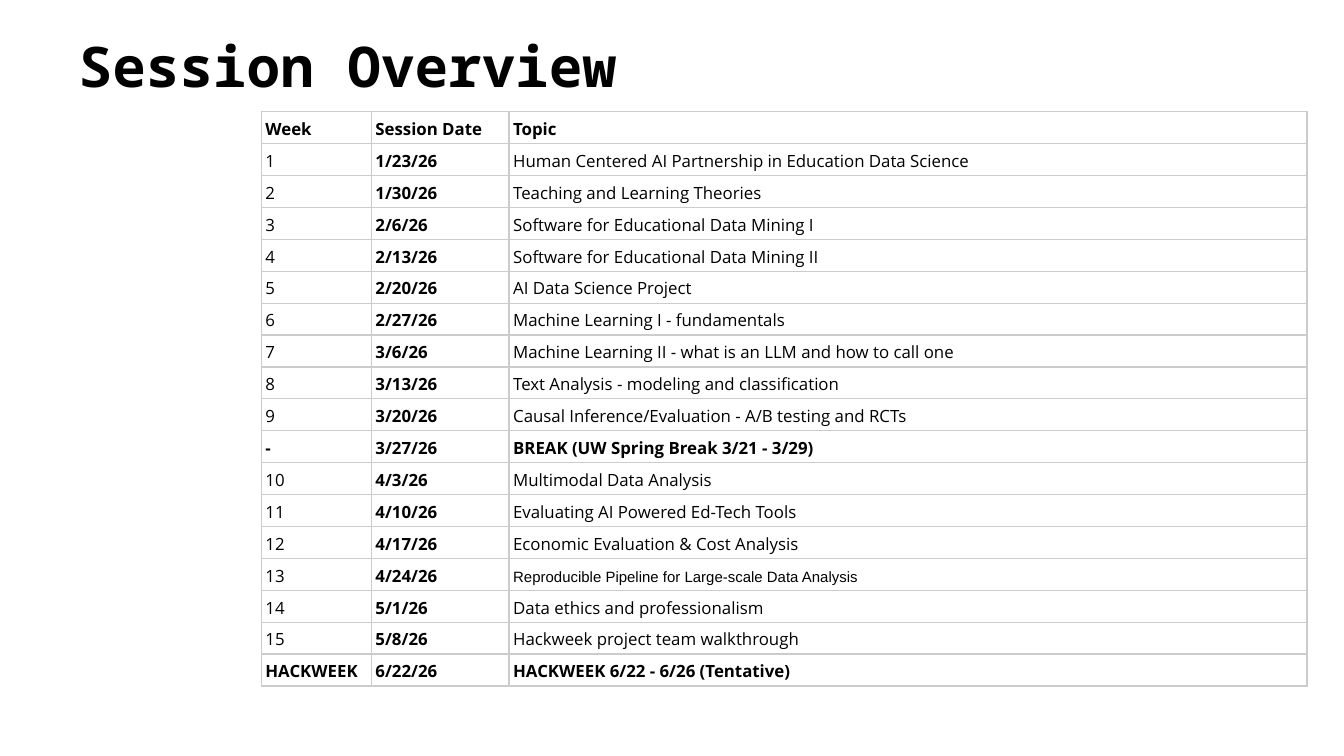
from dataclasses import dataclass

from lxml import etree
from pptx import Presentation
from pptx import util as u
from pptx.dml.color import RGBColor
from pptx.enum import text
from pptx.oxml import ns

PX = 5715


@dataclass(frozen=True)
class Theme:
    ink: str = "000000"
    rule: str = "CCCCCC"
    rule_pt: float = 0.75
    title_font: str = "Noto Sans Mono"
    body_font: str = "Open Sans"
    alt_font: str = "Arial"
    title_pt: int = 30
    body_pt: int = 9
    alt_pt: int = 8
    spacing: float = 1.15


T = Theme()

HEADER = ("Week", "Session Date", "Topic")
SESSIONS = [
    ("1", "1/23/26", "Human Centered AI Partnership in Education Data Science"),
    ("2", "1/30/26", "Teaching and Learning Theories"),
    ("3", "2/6/26", "Software for Educational Data Mining I"),
    ("4", "2/13/26", "Software for Educational Data Mining II"),
    ("5", "2/20/26", "AI Data Science Project"),
    ("6", "2/27/26", "Machine Learning I - fundamentals"),
    ("7", "3/6/26", "Machine Learning II - what is an LLM and how to call one"),
    ("8", "3/13/26", "Text Analysis - modeling and classification"),
    ("9", "3/20/26", "Causal Inference/Evaluation - A/B testing and RCTs"),
    ("-", "3/27/26", "BREAK (UW Spring Break 3/21 - 3/29)"),
    ("10", "4/3/26", "Multimodal Data Analysis"),
    ("11", "4/10/26", "Evaluating AI Powered Ed-Tech Tools"),
    ("12", "4/17/26", "Economic Evaluation & Cost Analysis"),
    ("13", "4/24/26", "Reproducible Pipeline for Large-scale Data Analysis"),
    ("14", "5/1/26", "Data ethics and professionalism"),
    ("15", "5/8/26", "Hackweek project team walkthrough"),
    ("HACKWEEK", "6/22/26", "HACKWEEK 6/22 - 6/26 (Tentative)"),
]
ALT_TOPIC_WEEK = "13"


def px(n):
    return u.Emu(n * PX)


def write(tf, content, font=T.body_font, size=T.body_pt, bold=False, spacing=None):
    p = tf.paragraphs[0]
    p.line_spacing = spacing
    r = p.add_run()
    r.text = content
    r.font.name = font
    r.font.size = u.Pt(size)
    r.font.bold = bold
    r.font.color.rgb = RGBColor.from_string(T.ink)


def add_borders(cell):
    tc_pr = cell._tc.get_or_add_tcPr()
    for i, side in enumerate(("lnL", "lnR", "lnT", "lnB")):
        ln = etree.Element(ns.qn(f"a:{side}"), w=str(u.Pt(T.rule_pt)))
        fill = etree.SubElement(ln, ns.qn("a:solidFill"))
        etree.SubElement(fill, ns.qn("a:srgbClr"), val=T.rule)
        tc_pr.insert(i, ln)


def add_title(s, x, y, w, h):
    sp = s.shapes.add_textbox(px(x), px(y), px(w), px(h))
    tf = sp.text_frame
    tf.word_wrap = True
    tf.vertical_anchor = text.MSO_ANCHOR.BOTTOM
    write(tf, "Session Overview", font=T.title_font, size=T.title_pt, bold=True)


def add_schedule(s, x, y, widths, row_h):
    rows = [HEADER] + SESSIONS
    frame = s.shapes.add_table(len(rows), len(widths), px(x), px(y),
                               px(sum(widths)), px(row_h * len(rows)))
    tbl = frame.table
    tbl.first_row = tbl.horz_banding = False
    for col, w in zip(tbl.columns, widths):
        col.width = px(w)
    for i, row in enumerate(rows):
        tbl.rows[i].height = px(row_h)
        for j, content in enumerate(row):
            cell = tbl.cell(i, j)
            cell.fill.background()
            cell.vertical_anchor = text.MSO_ANCHOR.BOTTOM
            cell.margin_left = cell.margin_right = px(5)
            cell.margin_top, cell.margin_bottom = px(3), px(6)
            bold = j == 1 or not row[0].isdigit()
            alt = j == 2 and row[0] == ALT_TOPIC_WEEK
            write(cell.text_frame, content, bold=bold, spacing=T.spacing,
                  font=T.alt_font if alt else T.body_font,
                  size=T.alt_pt if alt else T.body_pt)
            add_borders(cell)


def main():
    prs = Presentation()
    prs.slide_width, prs.slide_height = px(1600), px(900)
    s = prs.slides.add_slide(prs.slide_layouts[6])
    add_title(s, 78, -48, 1434, 174)
    add_schedule(s, 311, 133, (131, 164, 950), 38)
    prs.save("out.pptx")


if __name__ == "__main__":
    main()
